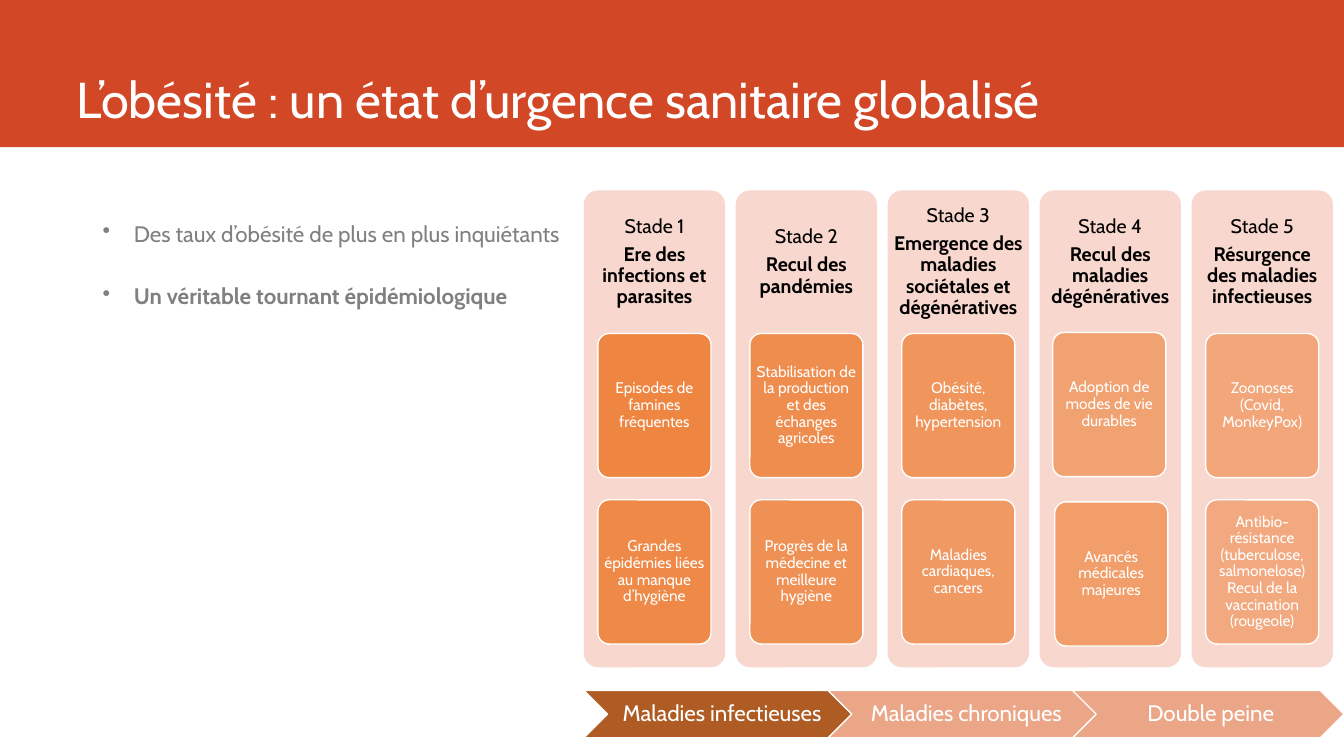
from dataclasses import dataclass

from lxml import etree
from pptx import Presentation, util as u
from pptx.dml.color import RGBColor
from pptx.enum import shapes, text
from pptx.oxml.ns import qn

W, H = 13.33, 7.5


@dataclass(frozen=True)
class Theme:
    font: str = "Cabin"
    banner: str = "D24726"
    white: str = "FFFFFF"
    black: str = "000000"
    grey: str = "808080"
    panel: str = "F8D7CE"
    card: str = "ED7D31"
    phase_on: str = "AF5C24"
    phase_off: str = "EBA587"
    title_pt: int = 36
    body_pt: int = 16
    stage_pt: int = 14
    card_pt: int = 11


T = Theme()

TITLE = "L’obésité : un état d’urgence sanitaire globalisé"
POINTS = [("Des taux d’obésité de plus en plus inquiétants", False),
          ("Un véritable tournant épidémiologique", True)]
STAGES = [
    ("Stade 1", "Ere des infections et parasites",
     ("Episodes de famines fréquentes",
      "Grandes épidémies liées au manque d’hygiène")),
    ("Stade 2", "Recul des pandémies",
     ("Stabilisation de la production et des échanges agricoles",
      "Progrès de la médecine et meilleure hygiène")),
    ("Stade 3", "Emergence des maladies sociétales et dégénératives",
     ("Obésité, diabètes, hypertension", "Maladies cardiaques, cancers")),
    ("Stade 4", "Recul des maladies dégénératives",
     ("Adoption de modes de vie durables", "Avancés médicales majeures")),
    ("Stade 5", "Résurgence des maladies infectieuses",
     ("Zoonoses (Covid, MonkeyPox)",
      "Antibio-résistance (tuberculose, salmonelose) "
      "Recul de la vaccination (rougeole)")),
]
PHASES = [("Maladies infectieuses", T.phase_on),
          ("Maladies chroniques", T.phase_off),
          ("Double peine", T.phase_off)]
# The cards of stage 4 sit slightly off the grid, and fade in reverse order.
NUDGES = {(3, 0): (-0.01, -0.01), (3, 1): (0.01, 0.02)}
FADE_ORDER = {(3, 0): 7, (3, 1): 6}


def rgb(code):
    return RGBColor.from_string(code)


def write(sp, lines, size, color, insets, anchor=text.MSO_ANCHOR.MIDDLE,
          align=text.PP_ALIGN.CENTER, spacing=0.9, before=0, after=0):
    """Fill a shape with (wording, bold) lines and return its paragraphs."""
    tf = sp.text_frame
    tf.word_wrap = True
    tf.vertical_anchor = anchor
    (tf.margin_left, tf.margin_top,
     tf.margin_right, tf.margin_bottom) = map(u.Inches, insets)
    for i, (wording, bold) in enumerate(lines):
        p = tf.paragraphs[0] if i == 0 else tf.add_paragraph()
        p.text = wording
        p.alignment = align
        p.line_spacing = spacing
        p.space_before, p.space_after = u.Pt(before), u.Pt(after)
        p.font.name, p.font.size, p.font.bold = T.font, u.Pt(size), bold
        p.font.color.rgb = rgb(color)
    return tf.paragraphs


def text_box(slide, box):
    return slide.shapes.add_textbox(*map(u.Inches, box))


def block(slide, kind, box, fill, outlined=False, alpha=None):
    sp = slide.shapes.add_shape(kind, *map(u.Inches, box))
    sp.shadow.inherit = False
    sp.fill.solid()
    sp.fill.fore_color.rgb = rgb(fill)
    if alpha is not None:
        color = sp.fill._xPr.find(qn("a:solidFill"))[0]
        etree.SubElement(color, qn("a:alpha")).set("val", str(round(alpha * 1000)))
    if outlined:
        sp.line.color.rgb = rgb(T.white)
        sp.line.width = u.Pt(1)
    else:
        sp.line.fill.background()
    return sp


def rounded(slide, box, *style):
    sp = block(slide, shapes.MSO_SHAPE.ROUNDED_RECTANGLE, box, *style)
    sp.adjustments[0] = 0.1
    return sp


def banner(slide, box):
    x, y, w, h = box
    block(slide, shapes.MSO_SHAPE.RECTANGLE, box, T.banner)
    title = text_box(slide, (x + 0.66, y, w - 1.57, h - 0.14))
    write(title, [(TITLE, False)], T.title_pt, T.white, (0.1, 0.05, 0.1, 0.05),
          text.MSO_ANCHOR.BOTTOM, text.PP_ALIGN.LEFT, 1)


def key_points(slide, box):
    paragraphs = write(text_box(slide, box), POINTS, T.body_pt, T.grey,
                       (0.1, 0.05, 0.1, 0.05), text.MSO_ANCHOR.TOP,
                       text.PP_ALIGN.LEFT, 1.5, before=4, after=12)
    indent = u.Inches(0.31)
    for p in paragraphs:
        pPr = p._p.get_or_add_pPr()
        pPr.set("marL", str(indent))
        pPr.set("indent", str(-indent))
        bullet = etree.Element(qn("a:buChar"), char="•")
        pPr.find(qn("a:defRPr")).addprevious(bullet)


def stage(slide, box, index):
    """One panel: a heading above two cards that fade from stage to stage."""
    x, y, w, h = box
    name, theme, cards = STAGES[index]
    rounded(slide, box, T.panel)
    head_h = 0.3 * h
    write(text_box(slide, (x, y, w, head_h)), [(name, False), (theme, True)],
          T.stage_pt, T.black, (0.06,) * 4, after=5)
    card_h, card_pitch = 1.43, 1.65
    for row, wording in enumerate(cards):
        dx, dy = NUDGES.get((index, row), (0, 0))
        order = FADE_ORDER.get((index, row), 2 * index + row)
        card = rounded(slide, (x + 0.1 * w + dx,
                               y + head_h + row * card_pitch + dy,
                               0.8 * w, card_h),
                       T.card, True, 90 - order * 40 / 9)
        write(card, [(wording, False)], T.card_pt, T.white,
              (0.03, 0.02, 0.03, 0.02))


def stages(slide, box):
    x, y, w, h = box
    gap = 0.105
    panel_w = (w - gap * (len(STAGES) - 1)) / len(STAGES)
    for i in range(len(STAGES)):
        stage(slide, (x + i * (panel_w + gap), y, panel_w, h), i)


def phases(slide, box):
    """A row of chevrons, each overlapping the next by a tenth."""
    x, y, w, h = box
    phase_w = w / (1 + 0.9 * (len(PHASES) - 1))
    for i, (wording, fill) in enumerate(PHASES):
        sp = block(slide, shapes.MSO_SHAPE.CHEVRON,
                   (x + 0.9 * i * phase_w, y, phase_w, h), fill, True)
        write(sp, [(wording, False)], T.body_pt, T.white,
              (0.07, 0.02, 0.02, 0.02))


def main():
    prs = Presentation()
    prs.slide_width, prs.slide_height = u.Inches(W), u.Inches(H)
    slide = prs.slides.add_slide(prs.slide_layouts[6])
    left = 5.79
    banner(slide, (0, 0, W, 1.46))
    key_points(slide, (0.92, 2, left - 0.92, 4.73))
    stages(slide, (left, 1.89, W - 0.11 - left, 4.73))
    phases(slide, (left, 6.85, W - left, 0.47))
    prs.save("out.pptx")


if __name__ == "__main__":
    main()
